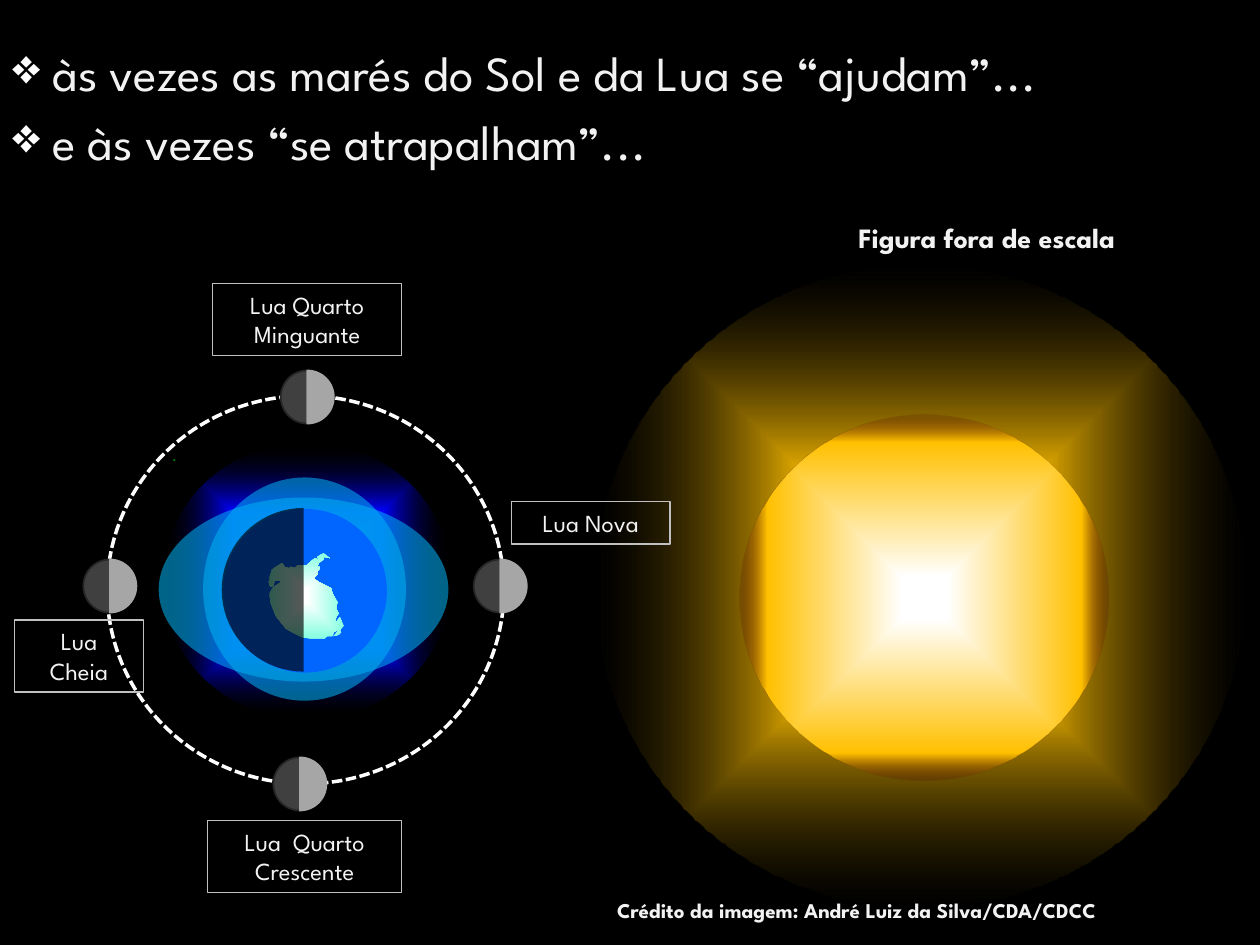
from math import cos, pi, sin

from lxml.etree import SubElement
from pptx import Presentation
from pptx.dml.color import RGBColor
from pptx.enum.dml import MSO_LINE
from pptx.enum.shapes import MSO_SHAPE
from pptx.enum.text import MSO_ANCHOR, MSO_AUTO_SIZE, PP_ALIGN
from pptx.oxml.ns import qn
from pptx.util import Cm, Pt

FONT = "League Spartan"
BLACK = RGBColor(0x00, 0x00, 0x00)
WHITE = RGBColor(0xFF, 0xFF, 0xFF)
TEXT = RGBColor(0xF2, 0xF2, 0xF2)
FRAME = RGBColor(0xC0, 0xC0, 0xC0)
OCEAN = RGBColor(0x00, 0x66, 0xFF)
DEEP_BLUE = RGBColor(0x00, 0x00, 0xFF)
TIDE = RGBColor(0x00, 0xB0, 0xF0)
MINT = RGBColor(0x85, 0xFF, 0xE0)
PALE_MINT = RGBColor(0xDE, 0xF9, 0xEC)
GREEN = RGBColor(0x00, 0x80, 0x00)
GOLD = RGBColor(0xFF, 0xC0, 0x00)
MAROON = RGBColor(0x4D, 0x08, 0x08)
MOON_LIGHT = RGBColor(0xA6, 0xA6, 0xA6)
MOON_DARK = RGBColor(0x40, 0x40, 0x40)
MOON_EDGE = RGBColor(0x26, 0x26, 0x26)

# Gradient stops: position, colour, opacity (percent)
EARTH_GLOW = [(0, OCEAN, 100), (50, DEEP_BLUE, 100), (100, BLACK, 0)]
LAND = [(3, WHITE, 100), (100, MINT, 100), (100, PALE_MINT, 100)]
SUN_GLOW = [(7, WHITE, 100), (32, GOLD, 100), (100, BLACK, 23)]
SUN_DISC = [(12, WHITE, 100), (85, GOLD, 100), (100, MAROON, 17)]

# Coastline on a grid of 60 by 68 units
COAST = [
    (41, 68), (45, 68), (47, 66), (51, 66), (52, 63), (56, 61), (54, 64), (52, 66),
    (56, 65), (58, 63), (57, 62), (58, 60), (60, 58), (57, 51), (53, 56), (54, 51),
    (56, 48), (54, 44), (55, 39), (51, 32), (50, 28), (40, 23), (36, 20), (37, 19),
    (39, 17), (39, 15), (41, 12), (41, 11), (39, 11), (40, 8), (44, 5), (44, 3),
    (49, 4), (44, 0), (42, 1), (39, 3), (40, 5), (37, 4), (30, 10), (23, 10),
    (21, 12), (18, 11), (16, 12), (13, 11), (11, 8), (3, 13), (1, 19), (1, 23),
    (0, 22), (1, 26), (2, 27), (4, 26), (5, 22), (10, 22), (9, 24), (4, 27),
    (1, 32), (1, 34), (2, 40), (4, 45), (6, 50), (10, 55), (14, 60), (19, 63),
    (27, 67), (33, 68),
]


def set_opacity(color_element, percent):
    SubElement(color_element, qn("a:alpha"), val=str(percent * 1000))


def paint(shape, color=None, opacity=100, stops=None, line=None, line_width=1):
    """Set the fill (none, solid or gradient) and the outline."""
    shape.shadow.inherit = False
    properties = shape._element.spPr
    if color is None:
        shape.fill.background()
    else:
        shape.fill.solid()
        shape.fill.fore_color.rgb = color
        if opacity < 100:
            set_opacity(properties.find(qn("a:solidFill"))[0], opacity)
    if stops:
        old = properties.find(qn("a:noFill"))
        gradient = SubElement(properties, qn("a:gradFill"), rotWithShape="1")
        stop_list = SubElement(gradient, qn("a:gsLst"))
        for position, stop_color, stop_opacity in stops:
            stop = SubElement(stop_list, qn("a:gs"), pos=str(position * 1000))
            element = SubElement(stop, qn("a:srgbClr"), val=str(stop_color))
            set_opacity(element, stop_opacity)
        center = SubElement(gradient, qn("a:path"), path="shape")
        SubElement(center, qn("a:fillToRect"), l="50000", t="50000", r="50000", b="50000")
        properties.replace(old, gradient)
    if line is None:
        shape.line.fill.background()
    else:
        shape.line.color.rgb = line
        shape.line.width = Pt(line_width)


def add_ellipse(shapes, left, top, width, height, **look):
    shape = shapes.add_shape(MSO_SHAPE.OVAL, Cm(left), Cm(top), Cm(width), Cm(height))
    paint(shape, **look)
    return shape


def add_outline(shapes, points, **look):
    corners = [(Cm(x), Cm(y)) for x, y in points]
    builder = shapes.build_freeform(*corners[0], scale=1.0)
    builder.add_line_segments(corners[1:], close=True)
    paint(builder.convert_to_shape(), **look)


def add_half_disc(shapes, x, y, radius, side, **look):
    """Half a disc around x, y; side is -1 for left and 1 for right."""
    steps = 36
    angles = [pi * (step / steps - 0.5) for step in range(steps + 1)]
    points = [(x + side * radius * cos(a), y + radius * sin(a)) for a in angles]
    add_outline(shapes, points, **look)


def write(box, lines, size, bold=False, align=PP_ALIGN.LEFT, gap=0, bullet=None):
    frame = box.text_frame
    frame.vertical_anchor = MSO_ANCHOR.TOP
    for index, line in enumerate(lines):
        para = frame.paragraphs[0] if index == 0 else frame.add_paragraph()
        para.alignment = align
        if index and gap:
            para.space_before = Pt(gap)
        if bullet:
            properties = para._p.get_or_add_pPr()
            color = SubElement(properties, qn("a:buClr"))
            SubElement(color, qn("a:srgbClr"), val=str(WHITE))
            SubElement(properties, qn("a:buChar"), char=bullet)
        span = para.add_run()
        span.text = line
        for name, value in {"name": FONT, "size": Pt(size), "bold": bold}.items():
            setattr(span.font, name, value)
        span.font.color.rgb = TEXT


def add_text(page, left, top, width, height, lines, size, wrap=True, grow=True, **style):
    box = page.shapes.add_textbox(Cm(left), Cm(top), Cm(width), Cm(height))
    box.text_frame.word_wrap = wrap
    if grow:
        box.text_frame.auto_size = MSO_AUTO_SIZE.SHAPE_TO_FIT_TEXT
    write(box, lines, size, **style)


def add_earth(page, left, top, width, height):
    """Glow, tidal bulges, globe with land, and night side."""
    add_ellipse(page.shapes, left, top, width, height, stops=EARTH_GLOW)
    solar = add_ellipse(page.shapes, left + 0.61, top + 0.91, 4.5, 4.09, color=TIDE, opacity=57)
    solar.rotation = 270
    add_ellipse(page.shapes, left - 0.08, top + 1.11, 5.84, 3.71, color=TIDE, opacity=57)

    globe = page.shapes.add_group_shape().shapes
    add_ellipse(globe, left + 1.22, top + 1.34, 3.3, 3.3, color=OCEAN)
    unit = 1.52 / 60
    land = [(left + 2.13 + x * unit, top + 2.23 + y * unit) for x, y in COAST]
    add_outline(globe, land, stops=LAND)
    x, y = left + 0.2, top + 0.33
    add_outline(globe, [(x, y + 0.03), (x + 0.05, y + 0.05), (x + 0.05, y)], color=GREEN)
    add_half_disc(globe, left + 2.84, top + 2.97, 1.65, -1, color=BLACK, opacity=65)


def add_sun(page, left, top, width, height):
    sun = page.shapes.add_group_shape().shapes
    add_ellipse(sun, left, top, width, height, stops=SUN_GLOW)
    add_ellipse(sun, left + 2.92, top + 3.03, 7.44, 7.37, stops=SUN_DISC)


def add_moon(page, left, top, size):
    moon = page.shapes.add_group_shape().shapes
    radius = size / 2
    x, y = left + radius, top + radius
    add_half_disc(moon, x, y, radius, -1, color=MOON_DARK, line=MOON_EDGE)
    add_half_disc(moon, x, y, radius, 1, color=MOON_LIGHT, line=MOON_LIGHT)


def add_orbit(page, left, top, width, height):
    """Dashed orbit with the four phases of the moon."""
    orbit = add_ellipse(page.shapes, left, top, width, height, line=WHITE, line_width=2)
    orbit.line.dash_style = MSO_LINE.SQUARE_DOT
    for x, y in [(3.5, -0.51), (-0.48, 3.3), (3.35, 7.29), (7.39, 3.3)]:
        add_moon(page, left + x, top + y, 1.07)


def add_label(page, left, top, width, height, lines):
    label = page.shapes.add_shape(
        MSO_SHAPE.RECTANGLE, Cm(left), Cm(top), Cm(width), Cm(height))
    paint(label, line=FRAME, line_width=0.75)
    label.text_frame.word_wrap = True
    label.text_frame.auto_size = MSO_AUTO_SIZE.SHAPE_TO_FIT_TEXT
    write(label, lines, 14, align=PP_ALIGN.CENTER)


def main():
    deck = Presentation()
    deck.slide_width, deck.slide_height = Cm(25.4), Cm(19.05)
    page = deck.slides.add_slide(deck.slide_layouts[6])
    page.background.fill.solid()
    page.background.fill.fore_color.rgb = BLACK

    add_earth(page, 3.28, 8.92, 5.82, 5.59)
    add_sun(page, 11.99, 5.33, 13.11, 12.98)

    # Statements
    add_text(page, 0, 0.74, 25.4, 3.18,
             [" às vezes as marés do Sol e da Lua se “ajudam”...",
              " e às vezes “se atrapalham”..."],
             28, grow=False, gap=5.6, bullet="❖")

    add_orbit(page, 2.16, 7.98, 8, 7.82)

    # Phase names
    add_label(page, 4.29, 5.72, 3.81, 1.45, ["Lua Quarto", "Minguante"])
    add_label(page, 0.3, 12.5, 2.59, 1.45, ["Lua", "Cheia"])
    add_label(page, 4.19, 16.54, 3.91, 1.45, ["Lua  Quarto", "Crescente"])
    add_label(page, 10.31, 10.11, 3.2, 0.86, ["Lua Nova"])

    # Credit and scale note
    add_text(page, 12.19, 17.96, 13.41, 0.76,
             ["Crédito da imagem: André Luiz da Silva/CDA/CDCC"], 12, bold=True)
    add_text(page, 16.69, 4.32, 6.4, 0.94, ["Figura fora de escala"], 16,
             wrap=False, bold=True, align=PP_ALIGN.CENTER)

    deck.save("out.pptx")


if __name__ == "__main__":
    main()
